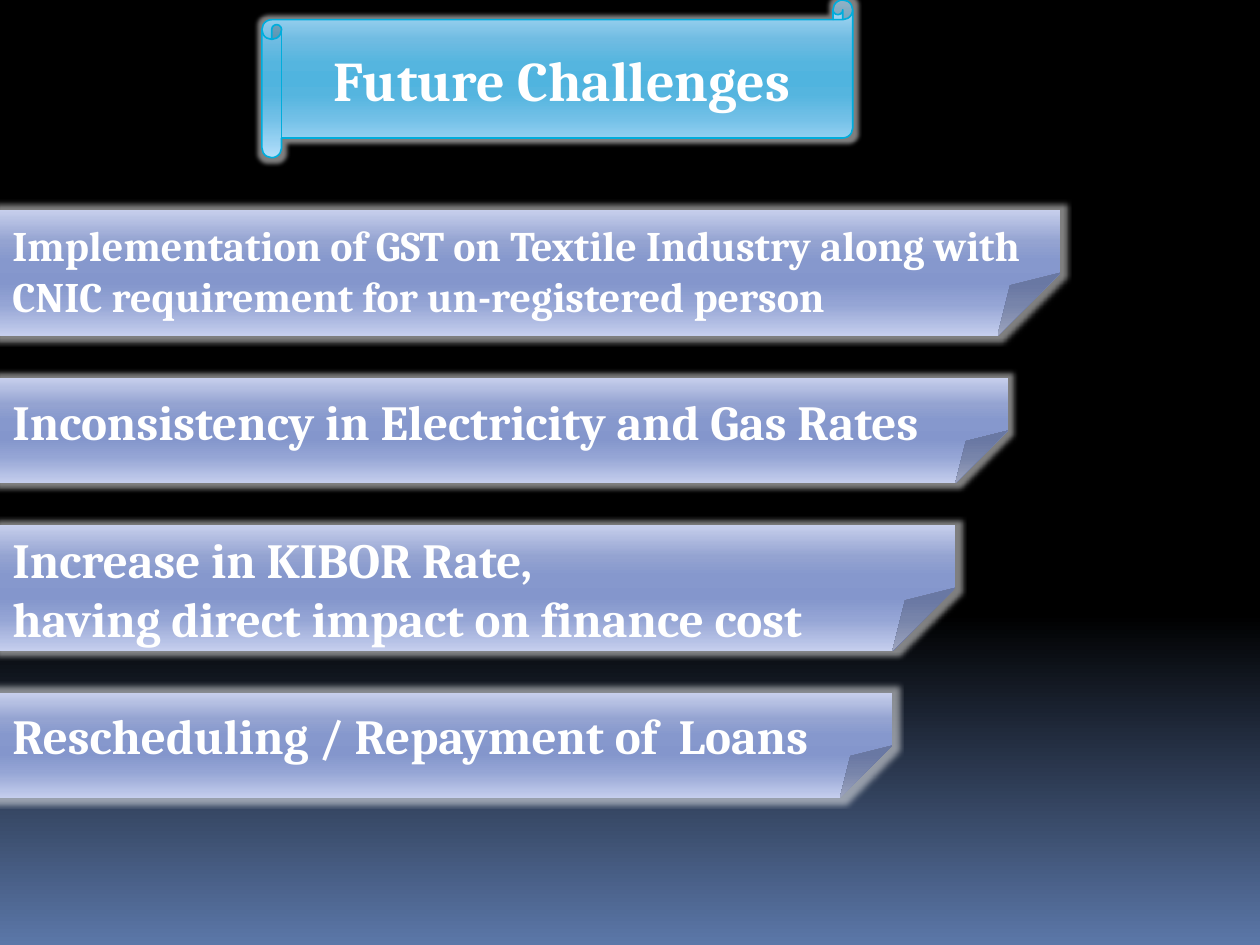
from dataclasses import dataclass

from lxml.etree import SubElement as Sub
from pptx import Presentation
from pptx.dml.color import RGBColor as Rgb
from pptx.enum.shapes import MSO_SHAPE as Kind
from pptx.enum.text import MSO_ANCHOR as Anchor, PP_ALIGN as Align
from pptx.oxml.ns import qn
from pptx.util import Cm, Pt


@dataclass(frozen=True)
class Theme:
    font: str = "Cambria"
    text: str = "FFFFFF"
    edge: str = "00ADDC"
    head: int = 32
    body: int = 28
    small: int = 24
    back: tuple = ((0, "000000"), (65, "000000"), (100, "5B77A8"))
    scroll: tuple = ((0, "B7DFF8"), (25, "70BCE2"), (40, "55B5DF"), (50, "50B4DF"),
                     (60, "55B5DF"), (75, "72C0E7"), (100, "B4DFFB"))
    bar: tuple = ((0, "C7CFEC"), (25, "94A3D1"), (40, "8698CD"), (50, "8496CC"),
                  (60, "8698CD"), (75, "95A5D5"), (100, "C5CEED"))


THEME = Theme()

BARS = (
    (4.23, 21.38, 2.54, 0.2, THEME.small,
     ("Implementation of GST on Textile Industry along with "
      "CNIC requirement for un-registered person",)),
    (7.62, 20.32, 2.12, 0.27, THEME.body,
     ("Inconsistency in Electricity and Gas Rates",)),
    (10.58, 19.26, 2.54, 0.09, THEME.body,
     ("Increase in KIBOR Rate,", "having direct impact on finance cost")),
    (13.97, 17.99, 2.12, 0.25, THEME.body,
     ("Rescheduling / Repayment of  Loans",)),
)


def shade(fill, root, stops):
    fill.gradient()
    fill.gradient_angle = 270
    items = root.find(".//" + qn("a:gsLst"))
    for old in list(items):
        items.remove(old)
    for pos, tint in stops:
        stop = Sub(items, qn("a:gs"), pos=str(pos * 1000))
        Sub(stop, qn("a:srgbClr"), val=tint)


def glow(shape, size):
    shape.shadow.inherit = False
    halo = Sub(shape.element.spPr.find(qn("a:effectLst")), qn("a:glow"),
               rad=str(int(size)))
    tint = Sub(halo, qn("a:srgbClr"), val=THEME.text)
    Sub(tint, qn("a:alpha"), val="50000")


def fold(shape, part):
    marks = shape.element.spPr.find(".//" + qn("a:avLst"))
    Sub(marks, qn("a:gd"), name="adj", fmla=f"val {int(part * 100000)}")


def write(frame, lines, size, align):
    frame.word_wrap = True
    for num, line in enumerate(lines):
        para = frame.add_paragraph() if num else frame.paragraphs[0]
        para.text = line
        para.alignment = align
        font = para.font
        font.name = THEME.font
        font.size = Pt(size)
        font.bold = True
        font.color.rgb = Rgb.from_string(THEME.text)


def add_head(slide, text):
    shape = slide.shapes.add_shape(Kind.HORIZONTAL_SCROLL, Cm(5.28), Cm(0),
                                   Cm(11.91), Cm(3.18))
    shade(shape.fill, shape.element.spPr, THEME.scroll)
    shape.line.color.rgb = Rgb.from_string(THEME.edge)
    shape.line.width = Pt(0.94)
    glow(shape, Cm(0.18))
    shape.text_frame.vertical_anchor = Anchor.MIDDLE
    write(shape.text_frame, (text,), THEME.head, Align.CENTER)


def add_bar(slide, top, width, height, inset, size, lines):
    shape = slide.shapes.add_shape(Kind.FOLDED_CORNER, Cm(0), Cm(top),
                                   Cm(width), Cm(height))
    fold(shape, 0.5)
    shade(shape.fill, shape.element.spPr, THEME.bar)
    shape.line.fill.background()
    glow(shape, Cm(0.22))
    frame = shape.text_frame
    frame.vertical_anchor = Anchor.TOP
    frame.margin_top = Cm(inset)
    frame.margin_bottom = Cm(0)
    write(frame, lines, size, Align.LEFT)


def main():
    deck = Presentation()
    deck.slide_width, deck.slide_height = Cm(25.4), Cm(19.05)
    slide = deck.slides.add_slide(deck.slide_layouts[6])
    shade(slide.background.fill, slide.element, THEME.back)
    add_head(slide, "Future Challenges")
    for bar in BARS:
        add_bar(slide, *bar)
    deck.save("out.pptx")


if __name__ == "__main__":
    main()
